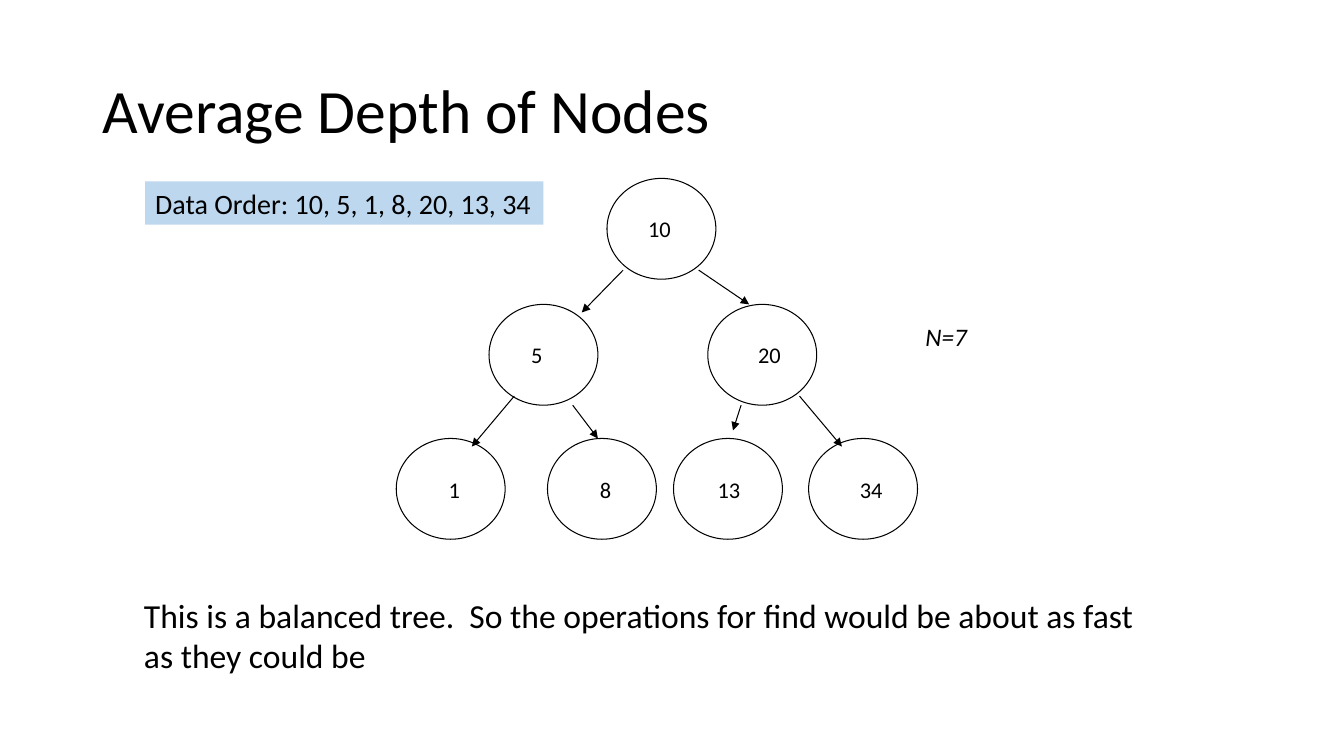
from pptx import Presentation
from pptx.dml.color import RGBColor
from pptx.enum.shapes import MSO_CONNECTOR, MSO_SHAPE
from pptx.enum.text import MSO_ANCHOR, MSO_AUTO_SIZE
from pptx.oxml.ns import qn
from pptx.util import Inches, Pt
from lxml import etree

STRAIGHT, OVAL = MSO_CONNECTOR.STRAIGHT, MSO_SHAPE.OVAL
MIDDLE, GROW = MSO_ANCHOR.MIDDLE, MSO_AUTO_SIZE.SHAPE_TO_FIT_TEXT

SLIDE_SIZE = 13.33, 7.5
FONT, BLACK, PALE_BLUE = "Calibri", "000000", "BDD7EE"
LINE_WIDTH = 0.75

TITLE = "Average Depth of Nodes"
DATA_ORDER = "Data Order: 10, 5, 1, 8, 20, 13, 34"
NODE_COUNT = "N=7"
CONCLUSION = ("This is a balanced tree.  So the operations for find "
              "would be about as fast as they could be")

# Each level: top of its row, then (key, left of node, indent of key in node)
LEVELS = [
    (1.77, [(10, 6.02, 0.31)]),
    (3.02, [(5, 4.85, 0.32), (20, 7.02, 0.40)]),
    (4.35, [(1, 3.93, 0.42), (8, 5.43, 0.42), (13, 6.68, 0.34), (34, 8.02, 0.41)]),
]
NODE_SIZE = 1.08, 1.0
KEY_DROP, KEY_HEIGHT = 0.32, 0.37
KEY_WIDTHS = {1: 0.32, 2: 0.43}  # by number of digits

# (parent, child): start and end of the arrow
BRANCHES = {
    (10, 5): ((6.18, 2.68), (5.77, 3.10)),
    (10, 20): ((6.93, 2.68), (7.43, 3.02)),
    (5, 1): ((5.10, 3.93), (4.68, 4.43)),
    (5, 8): ((5.68, 4.02), (5.93, 4.35)),
    (20, 13): ((7.35, 4.02), (7.27, 4.27)),
    (20, 34): ((7.93, 3.93), (8.35, 4.43)),
}


def color(hex_code):
    return RGBColor.from_string(hex_code)


def inches(*lengths):
    return [Inches(length) for length in lengths]


def add_text(slide, text, box, size, wrap=False, italic=False):
    label = slide.shapes.add_textbox(*inches(*box))
    frame = label.text_frame
    frame.word_wrap = wrap
    frame.auto_size = GROW
    paragraph = frame.paragraphs[0]
    run = paragraph.add_run()
    run.text = text
    run.font.color.rgb = color(BLACK)
    for name, value in {"name": FONT, "size": Pt(size), "italic": italic}.items():
        setattr(run.font, name, value)
    return label


def style_line(line):
    line.color.rgb = color(BLACK)
    line.width = Pt(LINE_WIDTH)


def add_node(slide, left, top):
    node = slide.shapes.add_shape(OVAL, *inches(left, top, *NODE_SIZE))
    node.shadow.inherit = False
    node.fill.background()
    style_line(node.line)


def add_branch(slide, start, end):
    branch = slide.shapes.add_connector(STRAIGHT, *inches(*start, *end))
    style_line(branch.line)
    outline = branch.line._get_or_add_ln()
    etree.SubElement(outline, qn("a:tailEnd"), type="triangle")
    etree.SubElement(outline.getparent(), qn("a:effectLst"))


def add_tree(slide):
    for top, nodes in LEVELS:
        for key, left, indent in nodes:
            add_node(slide, left, top)
            text = str(key)
            box = left + indent, top + KEY_DROP, KEY_WIDTHS[len(text)], KEY_HEIGHT
            add_text(slide, text, box, 16)
    for start, end in BRANCHES.values():
        add_branch(slide, start, end)


def main():
    deck = Presentation()
    deck.slide_width, deck.slide_height = inches(*SLIDE_SIZE)
    slide = deck.slides.add_slide(deck.slide_layouts[6])

    title = add_text(slide, TITLE, (0.92, 0.4, 11.5, 1.45), 44, wrap=True).text_frame
    title.auto_size = MSO_AUTO_SIZE.NONE
    title.vertical_anchor = MIDDLE
    title.paragraphs[0].line_spacing = 0.9

    add_tree(slide)
    add_text(slide, CONCLUSION, (1.33, 5.85, 10.06, 0.91), 24, wrap=True)
    add_text(slide, NODE_COUNT, (9.08, 3.14, 0.62, 0.4), 18, italic=True)
    data_order = add_text(slide, DATA_ORDER, (1.44, 1.8, 3.95, 0.43), 20)
    data_order.fill.solid()
    data_order.fill.fore_color.rgb = color(PALE_BLUE)

    deck.save("out.pptx")


if __name__ == "__main__":
    main()
